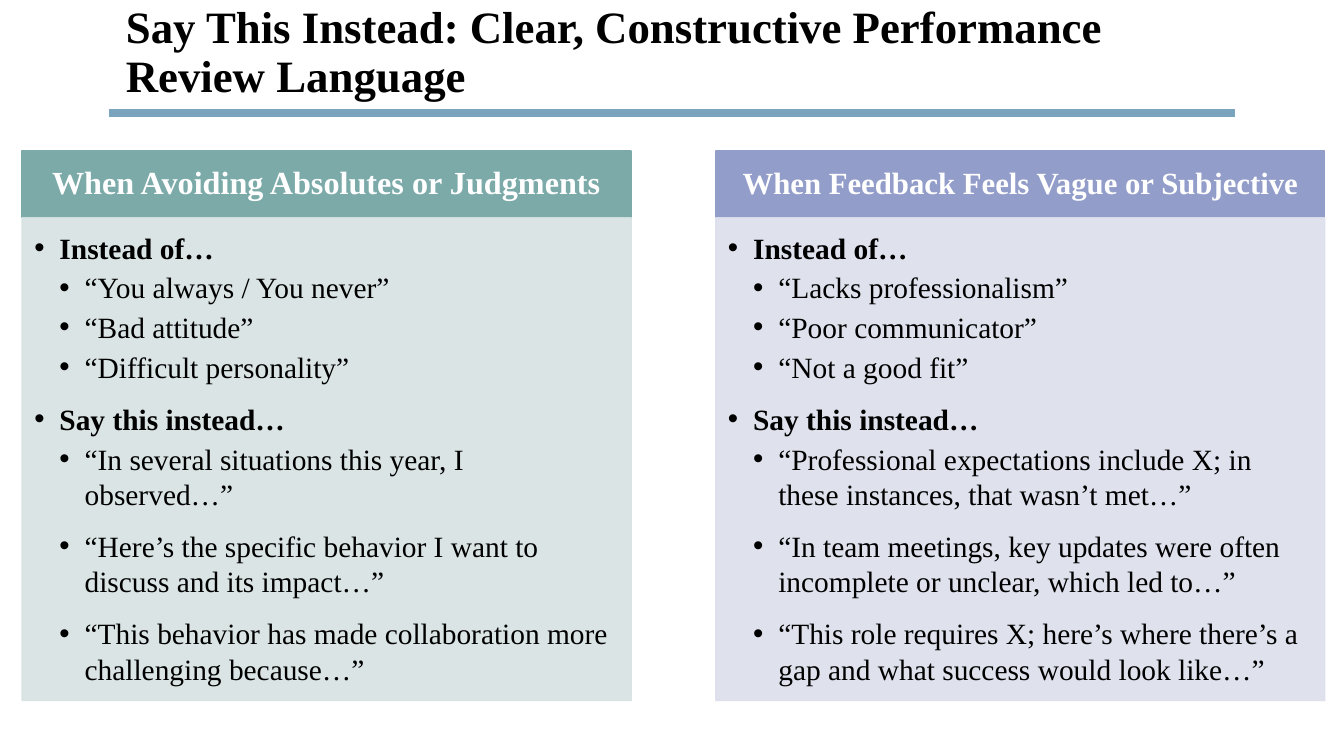
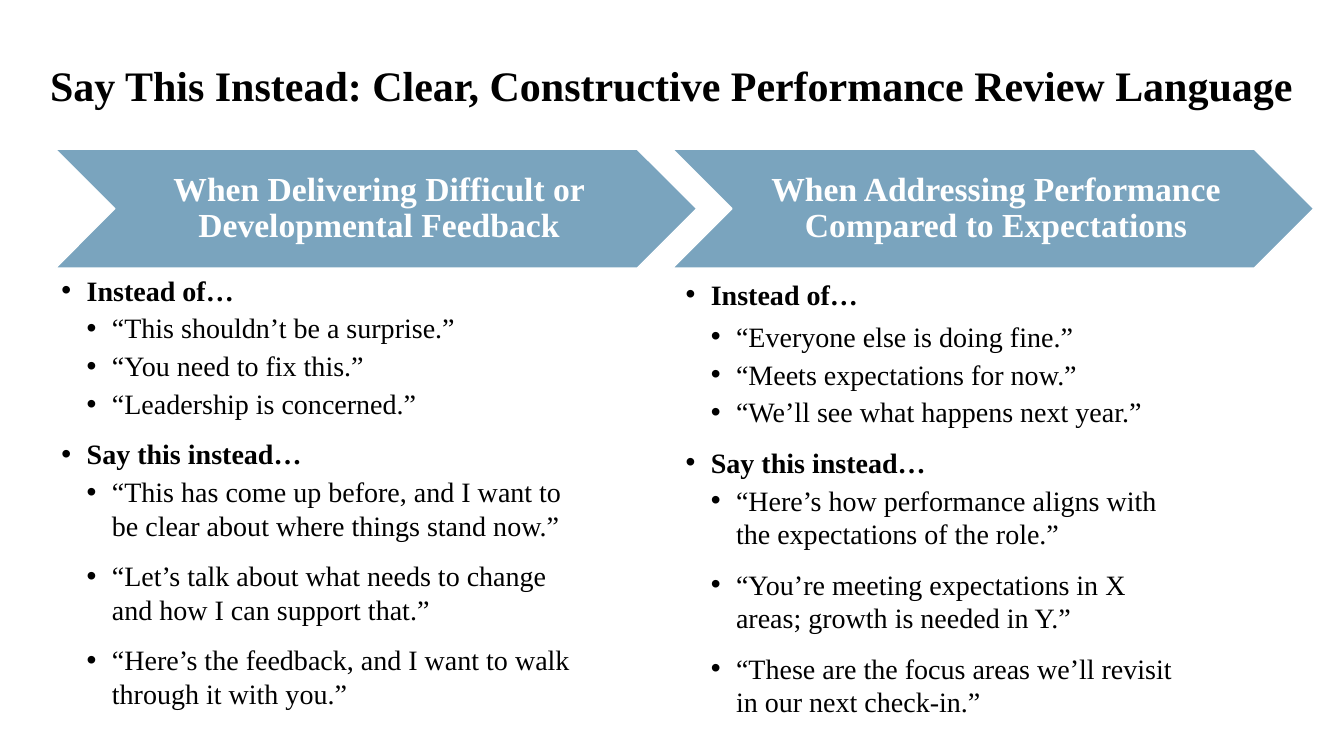
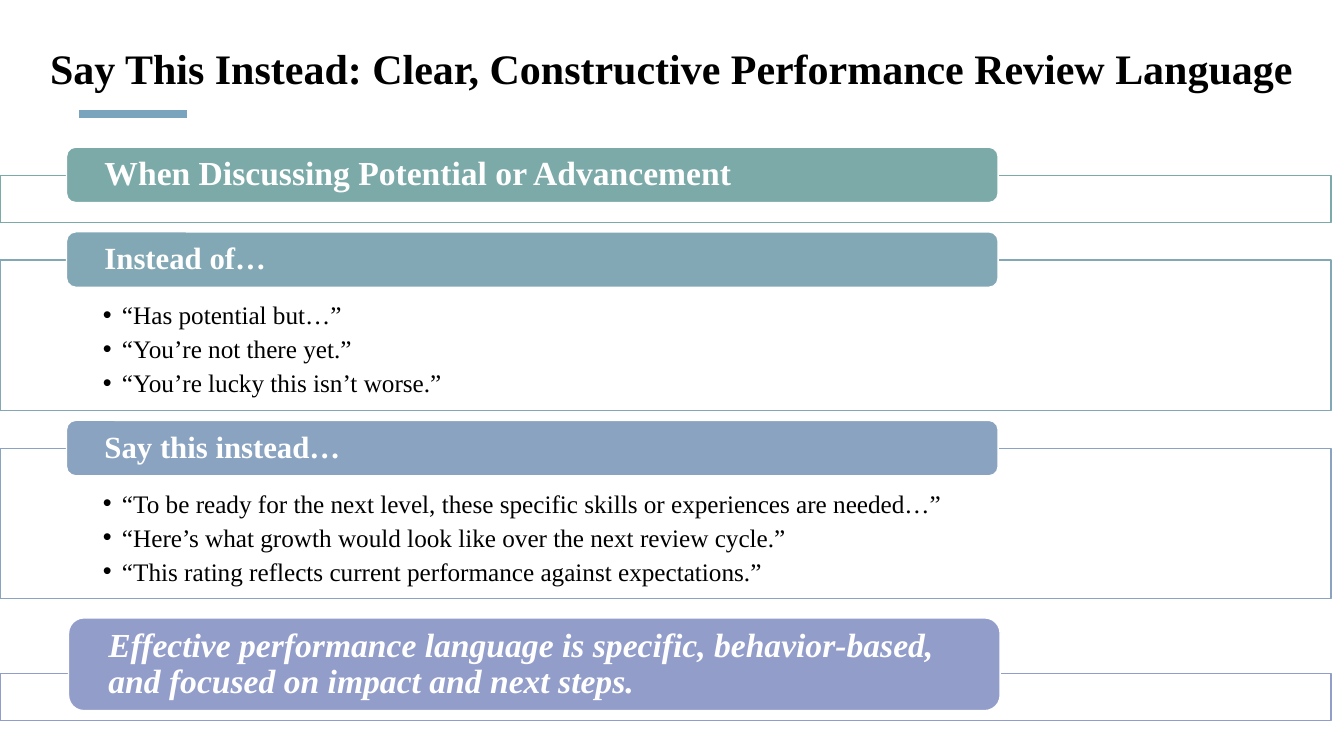
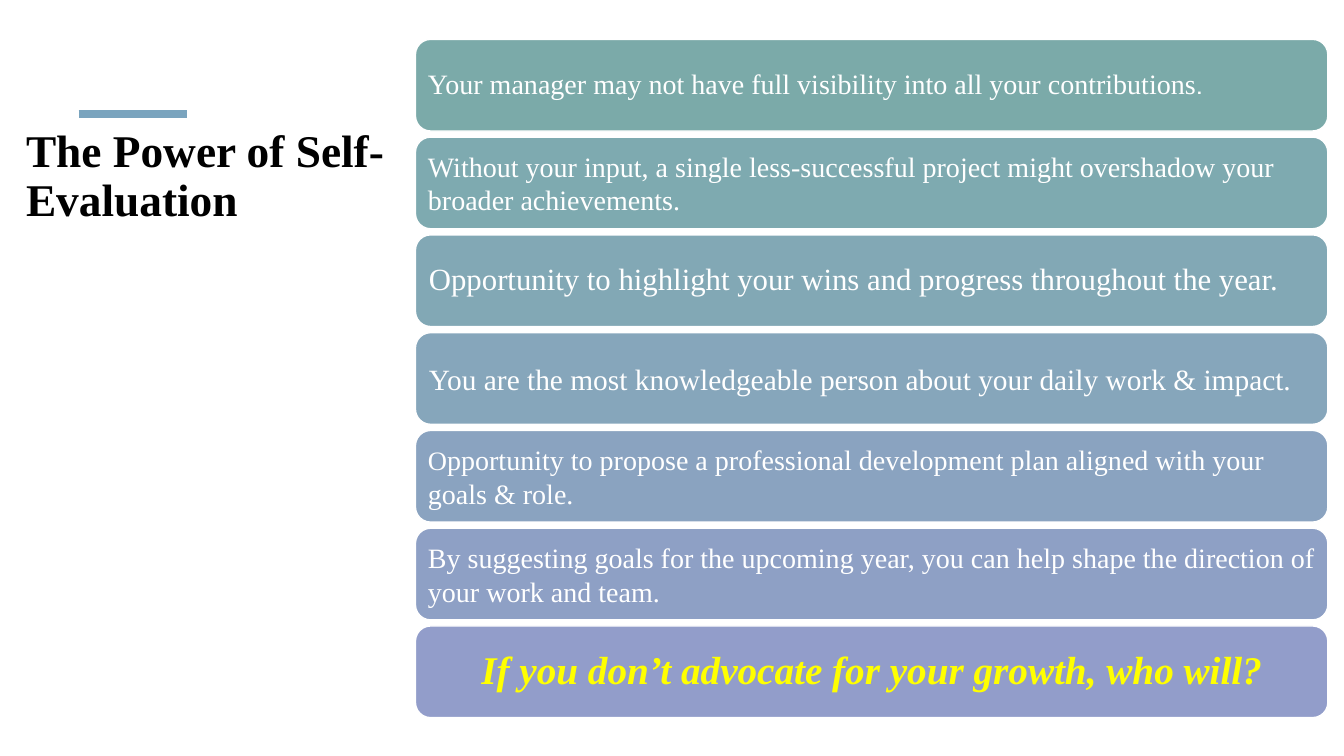
import dataclasses

import pptx
import pptx.dml.color
import pptx.enum.shapes
import pptx.enum.text
import pptx.oxml
import pptx.oxml.ns
import pptx.util

Inches = pptx.util.Inches
Pt = pptx.util.Pt
SHAPE = pptx.enum.shapes.MSO_SHAPE
ALIGN = pptx.enum.text.PP_ALIGN
ANCHOR = pptx.enum.text.MSO_ANCHOR


@dataclasses.dataclass(frozen=True)
class Theme:
    font: str = "Times New Roman"
    alt_font: str = "Cabin"
    black: str = "000000"
    white: str = "FFFFFF"
    yellow: str = "FFFF00"
    accent: str = "7AA4BE"
    green: str = "7BAAA9"
    sea: str = "7EAAB0"
    teal: str = "82A8B5"
    steel: str = "86A6BB"
    blue: str = "8AA3C0"
    iris: str = "8EA0C5"
    violet: str = "929DCA"
    pale_green: str = "D7E2E2"
    pale_violet: str = "DCDFEC"
    title: float = 30
    title_large: float = 32
    title_side: float = 32.4
    callout: float = 28
    heading: float = 24
    heading_mid: float = 23
    heading_small: float = 22
    card_large: float = 22
    card_mid: float = 21
    card: float = 20
    card_small: float = 19
    column: float = 21
    body: float = 20
    detail: float = 18
    rule: float = 6
    outline: float = 1
    opacity: int = 90
    quote_gap: float = 12
    tight: float = 0.9


T = Theme()

REVIEW_TITLE = "Say This Instead: Clear, Constructive Performance Review Language"
INSTEAD, SAY = "Instead of…", "Say this instead…"


def rgb(value):
    return pptx.dml.color.RGBColor.from_string(value)


def add_child(parent, tag, **attrs):
    child = pptx.oxml.parse_xml(f"<{tag} {pptx.oxml.ns.nsdecls('a')}/>")
    for name, value in attrs.items():
        child.set(name, str(value))
    parent.append(child)


def set_opacity(fill):
    """Make a solid fill let the background show through slightly."""
    color = fill._xPr.find(".//" + pptx.oxml.ns.qn("a:srgbClr"))
    add_child(color, "a:alpha", val=T.opacity * 1000)


def add_box(s, kind, box, fill, line, translucent=False):
    sp = s.shapes.add_shape(kind, *map(Inches, box))
    sp.shadow.inherit = False
    sp.fill.solid()
    sp.fill.fore_color.rgb = rgb(fill)
    sp.line.color.rgb = rgb(line)
    sp.line.width = Pt(T.outline)
    if translucent:
        set_opacity(sp.fill)
        if line == fill:
            set_opacity(sp.line.fill)
    return sp


def frame(sp, insets=(0.1, 0.05, 0.1, 0.05), anchor=ANCHOR.TOP):
    tf = sp.text_frame
    left, top, right, bottom = map(Inches, insets)
    settings = dict(word_wrap=True, vertical_anchor=anchor, margin_left=left,
                    margin_top=top, margin_right=right, margin_bottom=bottom)
    for name, value in settings.items():
        setattr(tf, name, value)
    return tf


def add_run(p, text, size, color, **fmt):
    r = p.add_run()
    r.text = text
    r.font.color.rgb = rgb(color)
    for name, value in {"name": T.font, "size": Pt(size), **fmt}.items():
        setattr(r.font, name, value)


def write_line(tf, text, size, color, align=ALIGN.LEFT, spacing=T.tight, **fmt):
    p = tf.paragraphs[0]
    p.alignment = align
    p.line_spacing = spacing
    add_run(p, text, size, color, **fmt)
    return p


def add_bullets(tf, items):
    """Write (text, size, bold, left margin, hanging indent, space after) rows."""
    for i, (text, size, bold, margin, hang, after) in enumerate(items):
        p = tf.add_paragraph() if i else tf.paragraphs[0]
        p.alignment = ALIGN.LEFT
        pPr = p._p.get_or_add_pPr()
        pPr.set("marL", str(Inches(margin)))
        pPr.set("indent", str(-Inches(hang)))
        add_child(pPr, "a:buFont", typeface="Arial")
        add_child(pPr, "a:buChar", char="•")
        p.space_after = Pt(after)
        add_run(p, text, size, T.black, bold=bold)


def write_phrases(tf, size, avoid, prefer, first_gap=None):
    """List the phrases to avoid, then those to prefer, under bold leads."""
    close = 0.15 * size
    rows = []
    for lead, quotes, gap, lead_gap in ((INSTEAD, avoid, close, first_gap or close),
                                        (SAY, prefer, T.quote_gap, close)):
        rows.append((lead, size, True, 0.25, 0.25, lead_gap))
        rows += [(q, size, False, 0.5, 0.25, gap) for q in quotes[:-1]]
        rows.append((quotes[-1], size, False, 0.5, 0.25, T.quote_gap))
    add_bullets(tf, rows)


def add_title(s, box, text, size, align=ALIGN.LEFT, anchor=ANCHOR.TOP, spacing=T.tight):
    tf = frame(s.shapes.add_textbox(*map(Inches, box)), anchor=anchor)
    write_line(tf, text, size, T.black, align, spacing, bold=True)


def add_rule(s, left, right, y):
    line = s.shapes.add_connector(pptx.enum.shapes.MSO_CONNECTOR.STRAIGHT,
                                  Inches(left), Inches(y), Inches(right), Inches(y))
    line.line.color.rgb = rgb(T.accent)
    line.line.width = Pt(T.rule)
    add_child(line._element.spPr, "a:effectLst")


def short_rule(s):
    add_rule(s, 0.78, 1.85, 1.13)


def phrase_column(s, box, heading, size, color, pale, avoid, prefer):
    x, y, w, h = box
    head_h = 0.66
    head = add_box(s, SHAPE.RECTANGLE, (x, y, w, head_h), color, color)
    write_line(frame(head, (0.17, 0.1, 0.17, 0.1), ANCHOR.MIDDLE),
               heading, size, T.white, ALIGN.CENTER, bold=True)
    body = add_box(s, SHAPE.RECTANGLE, (x, y + head_h, w, h - head_h), pale, pale, True)
    write_phrases(frame(body, (0.12, 0.12, 0.16, 0.18)), T.column, avoid, prefer)


def columns_slide(s):
    add_title(s, (1.15, 0, 11.1, 1.25), REVIEW_TITLE, T.title_large)
    add_rule(s, 1.08, 12.25, 1.12)
    columns = (
        ("When Avoiding Absolutes or Judgments", T.heading_mid, T.green, T.pale_green,
         ("“You always / You never”", "“Bad attitude”", "“Difficult personality”"),
         ("“In several situations this year, I observed…”",
          "“Here’s the specific behavior I want to discuss and its impact…”",
          "“This behavior has made collaboration more challenging because…”")),
        ("When Feedback Feels Vague or Subjective", T.heading_small, T.violet, T.pale_violet,
         ("“Lacks professionalism”", "“Poor communicator”", "“Not a good fit”"),
         ("“Professional expectations include X; in these instances, that wasn’t met…”",
          "“In team meetings, key updates were often incomplete or unclear, which led to…”",
          "“This role requires X; here’s where there’s a gap and what success would look like…”")),
    )
    for i, column in enumerate(columns):
        phrase_column(s, (0.22 + 6.88 * i, 1.5, 6.04, 5.45), *column)


def chevron_column(s, box, heading, body_shift, first_gap, avoid, prefer):
    x, y, w, h = box
    head = add_box(s, SHAPE.CHEVRON, box, T.accent, T.white)
    write_line(frame(head, (0.1, 0.04, 0.04, 0.04), ANCHOR.MIDDLE),
               heading, T.heading, T.white, ALIGN.CENTER, bold=True)
    dx, dy = body_shift
    body = s.shapes.add_textbox(*map(Inches, (x + dx, y + h + dy, 5.08, 4.36)))
    write_phrases(frame(body, (0, 0, 0, 0)), T.body, avoid, prefer, first_gap)


def chevrons_slide(s):
    add_title(s, (0, 0.44, 13.33, 0.7), REVIEW_TITLE, T.title,
              ALIGN.CENTER, ANCHOR.BOTTOM, 1.0)
    columns = (
        ("When Delivering Difficult or Developmental Feedback", (0.06, 0.05), None,
         ("“This shouldn’t be a surprise.”", "“You need to fix this.”",
          "“Leadership is concerned.”"),
         ("“This has come up before, and I want to be clear about where things stand now.”",
          "“Let’s talk about what needs to change and how I can support that.”",
          "“Here’s the feedback, and I want to walk through it with you.”")),
        ("When Addressing Performance Compared to Expectations", (0.13, 0.09), 6,
         ("“Everyone else is doing fine.”", "“Meets expectations for now.”",
          "“We’ll see what happens next year.”"),
         ("“Here’s how performance aligns with the expectations of the role.”",
          "“You’re meeting expectations in X areas; growth is needed in Y.”",
          "“These are the focus areas we’ll revisit in our next check‑in.”")),
    )
    for i, column in enumerate(columns):
        chevron_column(s, (0.55 + 6.12 * i, 1.48, 6.36, 1.18), *column)


def tabbed_panel(s, box, color, tab, heading, size, italic, quotes):
    """Draw an outlined panel whose coloured tab straddles its top edge."""
    x, y, w, h = box
    tab_x, tab_rise, tab_h = tab
    panel = add_box(s, SHAPE.RECTANGLE, box, T.white, color, True)
    if quotes:
        add_bullets(frame(panel, (1.02, 0.39, 1.02, 0.14)),
                    [(q, T.detail, False, 0.19, 0.19, 0.15 * T.detail) for q in quotes])
    head = add_box(s, SHAPE.ROUNDED_RECTANGLE, (x + tab_x, y - tab_rise, 9.24, tab_h),
                   color, T.white)
    write_line(frame(head, (0.35, 0, 0.35, 0), ANCHOR.MIDDLE),
               heading, size, T.white, bold=True, italic=italic)


def panels_slide(s):
    add_title(s, (0, 0.43, 13.33, 0.82), REVIEW_TITLE, T.title, ALIGN.CENTER)
    short_rule(s)
    tab, tall_tab = (0.66, 0.28, 0.55), (0.68, 0.55, 0.92)
    panels = (
        (1.74, 0.47, T.green, tab, "When Discussing Potential or Advancement",
         T.heading, False, ()),
        (2.58, 1.49, T.teal, tab, INSTEAD, T.heading_small, False,
         ("“Has potential but…”", "“You’re not there yet.”",
          "“You’re lucky this isn’t worse.”")),
        (4.45, 1.49, T.blue, tab, SAY, T.heading_small, False,
         ("“To be ready for the next level, these specific skills or experiences are needed…”",
          "“Here’s what growth would look like over the next review cycle.”",
          "“This rating reflects current performance against expectations.”")),
        (6.68, 0.47, T.violet, tall_tab,
         "Effective performance language is specific, behavior‑based, "
         "and focused on impact and next steps.", T.heading, True, ()),
    )
    for top, height, *panel in panels:
        tabbed_panel(s, (0, top, 13.2, height), *panel)


def card(s, box, fill, inset, spacing, runs, align=ALIGN.LEFT, color=T.white, **fmt):
    sp = add_box(s, SHAPE.ROUNDED_RECTANGLE, box, fill, T.white)
    (text, size, font), *rest = runs
    p = write_line(frame(sp, (inset,) * 4, ANCHOR.MIDDLE), text, size, color,
                   align, spacing, name=font, **fmt)
    for text, size, font in rest:
        add_run(p, text, size, color, name=font, **fmt)


def cards_slide(s):
    add_title(s, (0.16, 1.22, 3.8, 1.34), "The Power of Self-Evaluation", T.title_side)
    short_rule(s)
    cards = (
        (T.green, 0.08, T.tight,
         [("Your manager may not have full visibility into all your contributions",
           T.card, T.font), (".", T.card, T.alt_font)]),
        (T.sea, 0.08, 1.0,
         [("Without your input, a single less-successful project might overshadow "
           "your broader achievements.", T.card, T.font)]),
        (T.teal, 0.09, T.tight,
         [("Opportunity to highlight your wins and progress throughout the year.",
           T.card_large, T.font)]),
        (T.steel, 0.09, 1.0,
         [("You are the most knowledgeable person about your daily work & impact.",
           T.card_mid, T.font)]),
        (T.blue, 0.08, 1.0,
         [("O", T.card_small, T.font),
          ("pportunity to propose a professional development plan aligned with "
           "your goals & role.", T.card, T.font)]),
        (T.iris, 0.08, 1.0,
         [("By suggesting goals for the upcoming year, you can help shape the "
           "direction of your work and team.", T.card, T.font)]),
    )
    boxes = [(4.12, 0.39 + 0.97 * i, 9.05, 0.91) for i in range(len(cards) + 1)]
    for box, content in zip(boxes, cards):
        card(s, box, *content)
    card(s, boxes[-1], T.violet, 0.12, T.tight,
         [("If you don’t advocate for your growth, who will?", T.callout, T.font)],
         ALIGN.CENTER, T.yellow, bold=True, italic=True)


def main():
    prs = pptx.Presentation()
    prs.slide_width, prs.slide_height = Inches(13.33), Inches(7.5)
    for build in (columns_slide, chevrons_slide, panels_slide, cards_slide):
        build(prs.slides.add_slide(prs.slide_layouts[6]))
    prs.save("out.pptx")


if __name__ == "__main__":
    main()
